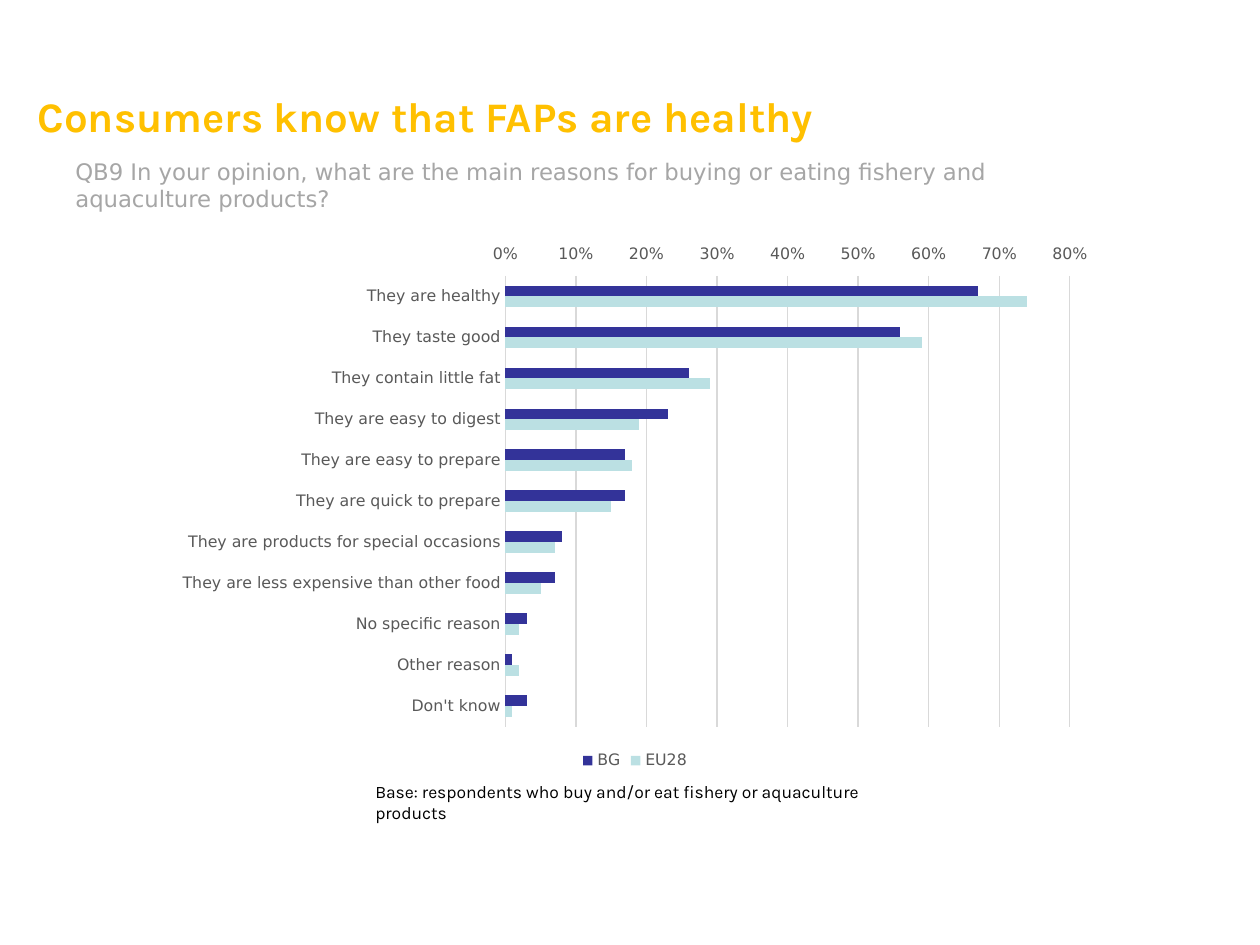
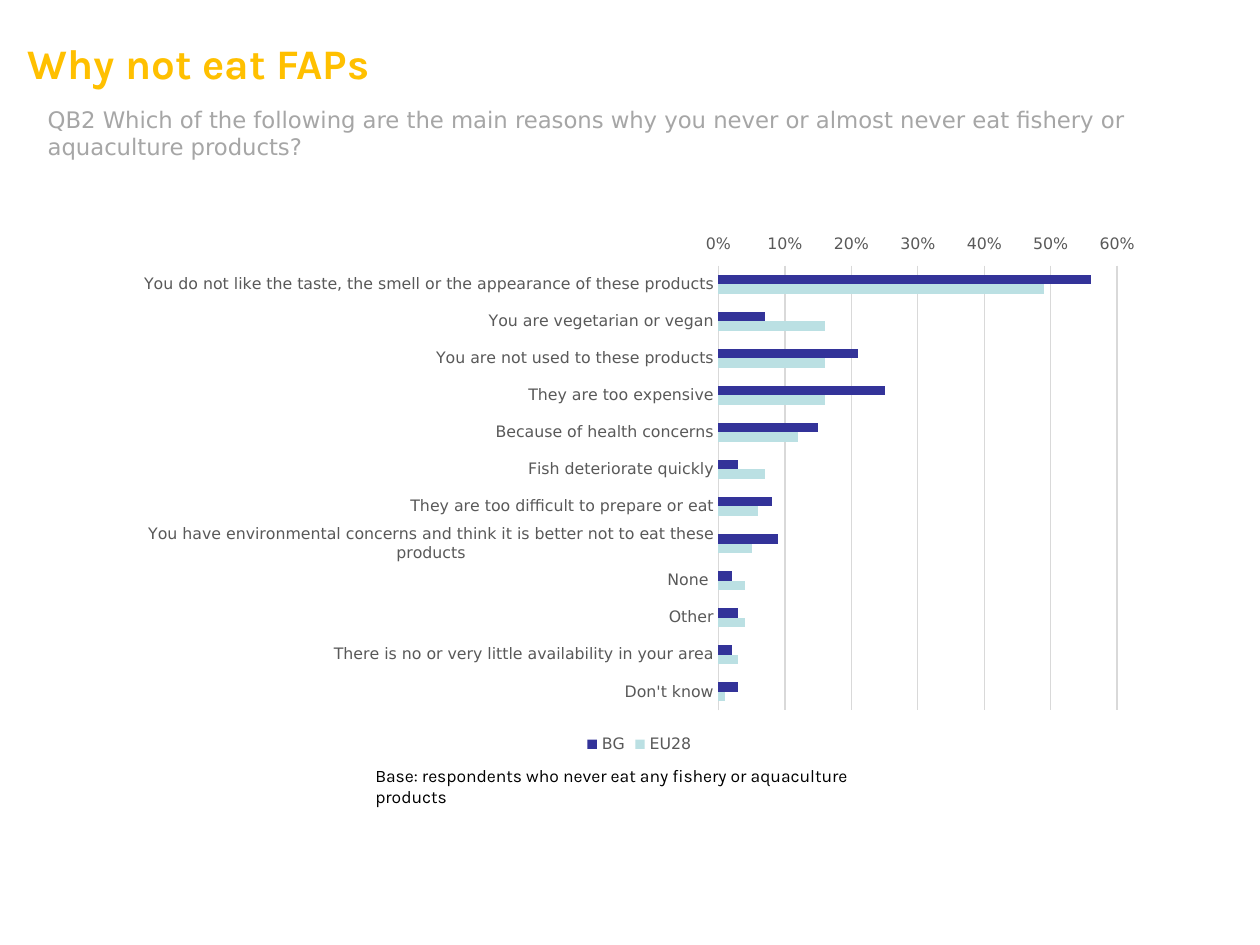
"""Build two survey slides about buying and avoiding fishery and aquaculture products."""
from dataclasses import dataclass

from pptx import Presentation
from pptx.chart.data import CategoryChartData
from pptx.dml.color import RGBColor
from pptx.enum.chart import XL_CHART_TYPE, XL_LEGEND_POSITION, XL_TICK_LABEL_POSITION, XL_TICK_MARK
from pptx.enum.text import MSO_ANCHOR, MSO_AUTO_SIZE
from pptx.util import Pt

BAR_CLUSTERED = XL_CHART_TYPE.BAR_CLUSTERED
LABELS_HIGH = XL_TICK_LABEL_POSITION.HIGH
LEGEND_BOTTOM = XL_LEGEND_POSITION.BOTTOM
NO_TICKS = XL_TICK_MARK.NONE
MIDDLE, TOP = MSO_ANCHOR.MIDDLE, MSO_ANCHOR.TOP
GROW, FIXED = MSO_AUTO_SIZE.SHAPE_TO_FIT_TEXT, MSO_AUTO_SIZE.NONE

EMU_PER_PX = 9144
SLIDE_SIZE = (1000, 750)


@dataclass(frozen=True)
class Theme:
    """Colours, fonts and type sizes of the deck."""
    title: str = "FFC000"
    question: str = "A6A6A6"
    base: str = "000000"
    labels: str = "595959"
    grid: str = "D9D9D9"
    bulgaria: str = "333399"
    europe: str = "BBE0E3"
    heading_font: str = "Karla"
    body_font: str = "DejaVu Sans"
    title_size: int = 24
    question_size: int = 13
    base_size: int = 10
    label_size: int = 9
    grid_width: float = 0.75
    bar_gap: int = 182


THEME = Theme()

SURVEYS = [
    {
        "title": "Consumers know that FAPs are healthy",
        "title_box": (20, 41, 961, 102),
        "question": "QB9 In your opinion, what are the main reasons for buying or eating "
                    "fishery and aquaculture products?",
        "question_box": (50, 120, 827, 54),
        "base": "Base: respondents who buy and/or eat fishery or aquaculture products",
        "base_box": (288, 615, 425, 27),
        "chart_box": (130, 186, 748, 429),
        "answers": [
            ("They are healthy", 67, 74),
            ("They taste good", 56, 59),
            ("They contain little fat", 26, 29),
            ("They are easy to digest", 23, 19),
            ("They are easy to prepare", 17, 18),
            ("They are quick to prepare", 17, 15),
            ("They are products for special occasions", 8, 7),
            ("They are less expensive than other food", 7, 5),
            ("No specific reason", 3, 2),
            ("Other reason", 1, 2),
            ("Don't know", 3, 1),
        ],
    },
    {
        "title": "Why not eat FAPs",
        "title_box": (12, 29, 961, 42),
        "question": "QB2 Which of the following are the main reasons why you never or almost "
                    "never eat fishery or aquaculture products?",
        "question_box": (28, 79, 945, 54),
        "base": "Base: respondents who never eat any fishery or aquaculture products",
        "base_box": (288, 602, 425, 27),
        "chart_box": (98, 178, 819, 424),
        "answers": [
            ("You do not like the taste, the smell or the appearance of these products", 56, 49),
            ("You are vegetarian or vegan", 7, 16),
            ("You are not used to these products", 21, 16),
            ("They are too expensive", 25, 16),
            ("Because of health concerns", 15, 12),
            ("Fish deteriorate quickly", 3, 7),
            ("They are too difficult to prepare or eat", 8, 6),
            ("You have environmental concerns and think it is better not to eat these products",
             9, 5),
            ("None ", 2, 4),
            ("Other", 3, 4),
            ("There is no or very little availability in your area", 2, 3),
            ("Don't know", 3, 1),
        ],
    },
]


def scaled(lengths):
    """Turn px lengths into EMU."""
    return [length * EMU_PER_PX for length in lengths]


def set_font(font, name, size, color, bold=False):
    """Apply one type style to a font."""
    font.name, font.size, font.bold = name, Pt(size), bold
    font.color.rgb = RGBColor.from_string(color)


def add_text(slide, text, box, *, font, size, color, bold=False, anchor=TOP, fit=GROW):
    """Place one paragraph of text in a wrapping box."""
    frame = slide.shapes.add_textbox(*scaled(box)).text_frame
    frame.word_wrap, frame.auto_size, frame.vertical_anchor = True, fit, anchor
    run = frame.paragraphs[0].add_run()
    run.text = text
    set_font(run.font, font, size, color, bold)


def set_grid_line(line):
    """Give a chart line the shared grid style."""
    line.color.rgb = RGBColor.from_string(THEME.grid)
    line.width = Pt(THEME.grid_width)


def add_answer_chart(slide, answers, box):
    """Draw the answers as paired bars, first answer on top."""
    labels, bulgaria, europe = zip(*reversed(answers))
    data = CategoryChartData(number_format="0%")
    data.categories = labels
    for name, shares in (("EU28", europe), ("BG", bulgaria)):
        data.add_series(name, [share / 100 for share in shares])
    chart = slide.shapes.add_chart(BAR_CLUSTERED, *scaled(box), data).chart
    chart.has_title = False
    set_font(chart.font, THEME.body_font, THEME.label_size, THEME.labels)

    chart.has_legend = True
    chart.legend.position = LEGEND_BOTTOM
    chart.legend.include_in_layout = False
    set_font(chart.legend.font, THEME.body_font, THEME.label_size, THEME.labels)

    plot = chart.plots[0]
    plot.gap_width, plot.overlap, plot.vary_by_categories = THEME.bar_gap, 0, False
    for series, color in zip(plot.series, (THEME.europe, THEME.bulgaria)):
        series.format.fill.solid()
        series.format.fill.fore_color.rgb = RGBColor.from_string(color)

    reasons, shares = chart.category_axis, chart.value_axis
    for axis in (reasons, shares):
        axis.major_tick_mark = axis.minor_tick_mark = NO_TICKS
        set_font(axis.tick_labels.font, THEME.body_font, THEME.label_size, THEME.labels)
    set_grid_line(reasons.format.line)
    shares.format.line.fill.background()
    shares.has_major_gridlines = True
    set_grid_line(shares.major_gridlines.format.line)
    shares.tick_label_position = LABELS_HIGH
    shares.tick_labels.number_format = "0%"
    shares.tick_labels.number_format_is_linked = False


def add_survey_slide(deck, survey):
    """Add one survey question with its title, base and chart."""
    slide = deck.slides.add_slide(deck.slide_layouts[6])
    add_text(slide, survey["title"], survey["title_box"], font=THEME.heading_font,
             size=THEME.title_size, color=THEME.title, bold=True, anchor=MIDDLE, fit=FIXED)
    add_text(slide, survey["base"], survey["base_box"], font=THEME.heading_font,
             size=THEME.base_size, color=THEME.base)
    add_answer_chart(slide, survey["answers"], survey["chart_box"])
    add_text(slide, survey["question"], survey["question_box"], font=THEME.body_font,
             size=THEME.question_size, color=THEME.question)


def main():
    """Build and save the deck."""
    deck = Presentation()
    deck.slide_width, deck.slide_height = scaled(SLIDE_SIZE)
    for survey in SURVEYS:
        add_survey_slide(deck, survey)
    deck.save("out.pptx")


if __name__ == "__main__":
    main()
